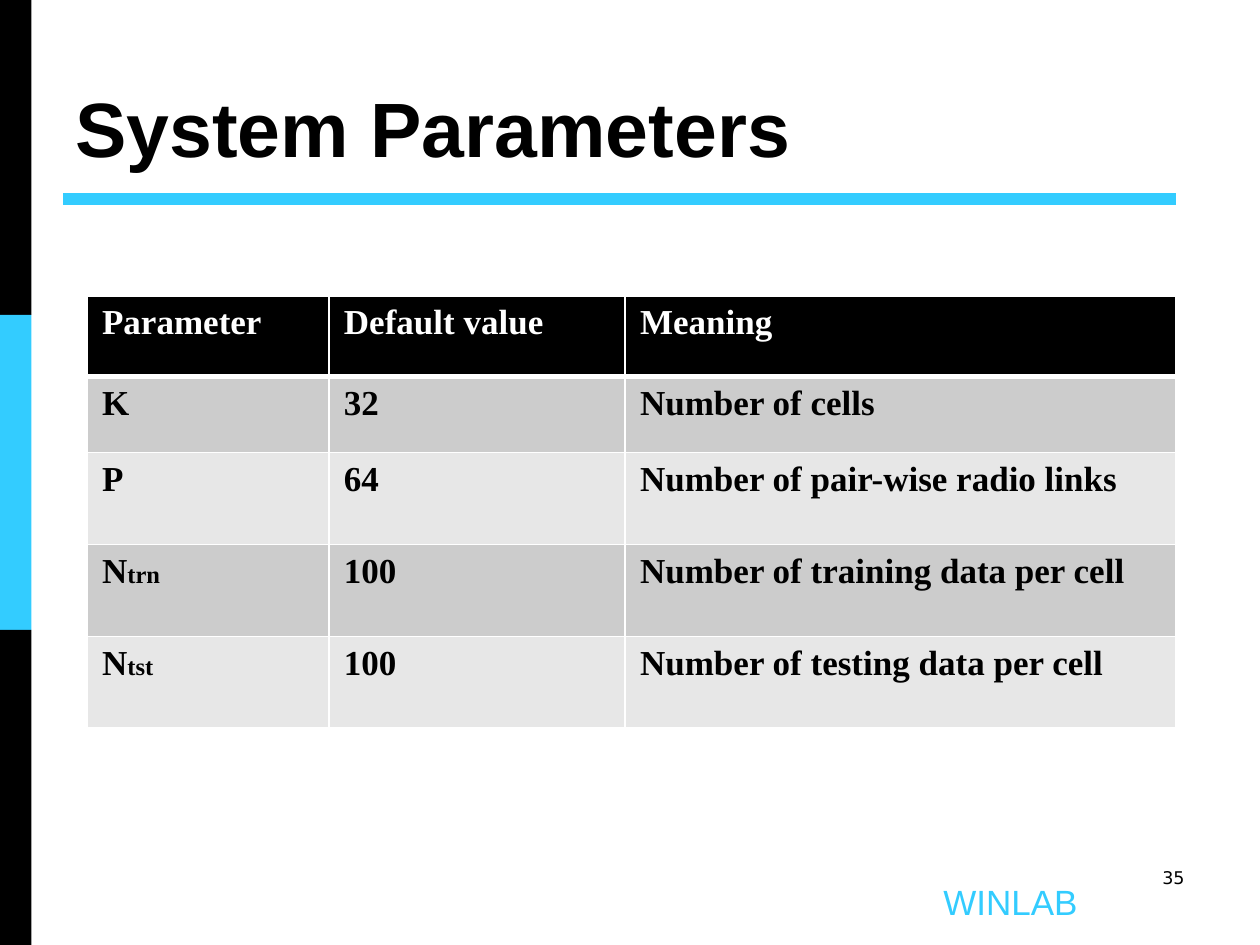
from lxml.etree import SubElement
from pptx import Presentation
from pptx.dml.color import RGBColor
from pptx.enum.shapes import MSO_CONNECTOR as Connector, MSO_SHAPE as Shape
from pptx.enum.text import MSO_ANCHOR as Anchor, PP_ALIGN as Align
from pptx.oxml.ns import qn
from pptx.util import Inches, Pt

WIDTH, HEIGHT = 10, 7.5
BLACK, WHITE, CYAN = "000000", "FFFFFF", "33CCFF"
BANDS = ("CCCCCC", "E7E7E7")
COLUMNS = (1.92, 2.35, 4.37)
ROWS = (0.64, 0.6, 0.73, 0.73, 0.73)
SUBSCRIPT_SIZE = 14

# A cell is a tuple of its main text and, where needed, its small suffix.
PARAMETERS = (
    (("Parameter",), ("Default value",), ("Meaning",)),
    (("K",), ("32",), ("Number of cells",)),
    (("P",), ("64",), ("Number of pair-wise radio links",)),
    (("N", "trn"), ("100",), ("Number of training data per cell",)),
    (("N", "tst"), ("100",), ("Number of testing data per cell",)),
)


def paint(color_format, color):
    color_format.rgb = RGBColor.from_string(color)


def fill_solid(fill, color):
    fill.solid()
    paint(fill.fore_color, color)


def set_font(font, name, size, color, bold=False):
    font.name, font.size, font.bold = name, Pt(size), bold
    paint(font.color, color)


def add_side_bar(page, colors):
    """Stack equal blocks down the left edge."""
    height = HEIGHT / len(colors)
    for index, color in enumerate(colors):
        block = page.shapes.add_shape(
            Shape.RECTANGLE, 0, Inches(index * height),
            Inches(WIDTH / 40), Inches(height))
        block.shadow.inherit = False
        fill_solid(block.fill, color)
        block.line.fill.background()


def add_rule(page, left, right, top, color, weight):
    rule = page.shapes.add_connector(
        Connector.STRAIGHT, Inches(left), Inches(top), Inches(right), Inches(top))
    paint(rule.line.color, color)
    rule.line.width = Pt(weight)
    SubElement(rule.element.spPr, qn("a:effectLst"))


def add_text(page, text, place, name, size, color, bold=False,
             align=Align.LEFT, anchor=Anchor.TOP):
    box = page.shapes.add_textbox(*map(Inches, place))
    frame = box.text_frame
    frame.word_wrap = True
    frame.vertical_anchor = anchor
    para = frame.paragraphs[0]
    para.text = text
    para.alignment = align
    set_font(para.font, name, size, color, bold)


def set_borders(cell, weights):
    """Draw white borders; weights maps a side (L, R, T, B) to points."""
    properties = cell._tc.get_or_add_tcPr()
    for side, weight in weights.items():
        line = SubElement(properties, qn(f"a:ln{side}"), w=str(Pt(weight)))
        SubElement(SubElement(line, qn("a:solidFill")), qn("a:srgbClr"), val=WHITE)


def fill_cell(cell, parts, row):
    header = row == 0
    cell.margin_left = cell.margin_right = Inches(0.12)
    cell.margin_top = cell.margin_bottom = Inches(0.06)
    set_borders(cell, {"L": 1, "R": 1, "T": 3 if row == 1 else 1,
                       "B": 3 if header else 1})
    fill_solid(cell.fill, BLACK if header else BANDS[(row - 1) % 2])
    para = cell.text_frame.paragraphs[0]
    para.alignment = Align.LEFT
    set_font(para.font, "Times New Roman", 20, WHITE if header else BLACK, True)
    for index, part in enumerate(parts):
        span = para.add_run()
        span.text = part
        if index:
            span.font.size = Pt(SUBSCRIPT_SIZE)


def add_parameter_table(page, left, top):
    table = page.shapes.add_table(
        len(ROWS), len(COLUMNS), Inches(left), Inches(top),
        Inches(sum(COLUMNS)), Inches(sum(ROWS))).table
    for column, width in zip(table.columns, COLUMNS):
        column.width = Inches(width)
    for index, (row, height) in enumerate(zip(table.rows, ROWS)):
        row.height = Inches(height)
        for cell, parts in zip(row.cells, PARAMETERS[index]):
            fill_cell(cell, parts, index)


def main():
    deck = Presentation()
    deck.slide_width, deck.slide_height = Inches(WIDTH), Inches(HEIGHT)
    page = deck.slides.add_slide(deck.slide_layouts[6])
    fill_solid(page.background.fill, WHITE)

    add_side_bar(page, (BLACK, CYAN, BLACK))
    add_rule(page, 0.5, 9.33, 1.58, CYAN, 7)
    add_text(page, "WINLAB", (7.35, 6.94, 1.34, 0.43), "Arial", 20, CYAN,
             align=Align.CENTER)
    add_text(page, "System Parameters", (0.5, 0.17, 9, 1.25), "Arial", 44, BLACK,
             bold=True, anchor=Anchor.BOTTOM)
    add_text(page, "35", (7.17, 6.83, 2.33, 0.5), "DejaVu Sans", 10, BLACK,
             align=Align.RIGHT)
    add_parameter_table(page, 0.69, 2.35)
    deck.save("out.pptx")


if __name__ == "__main__":
    main()
